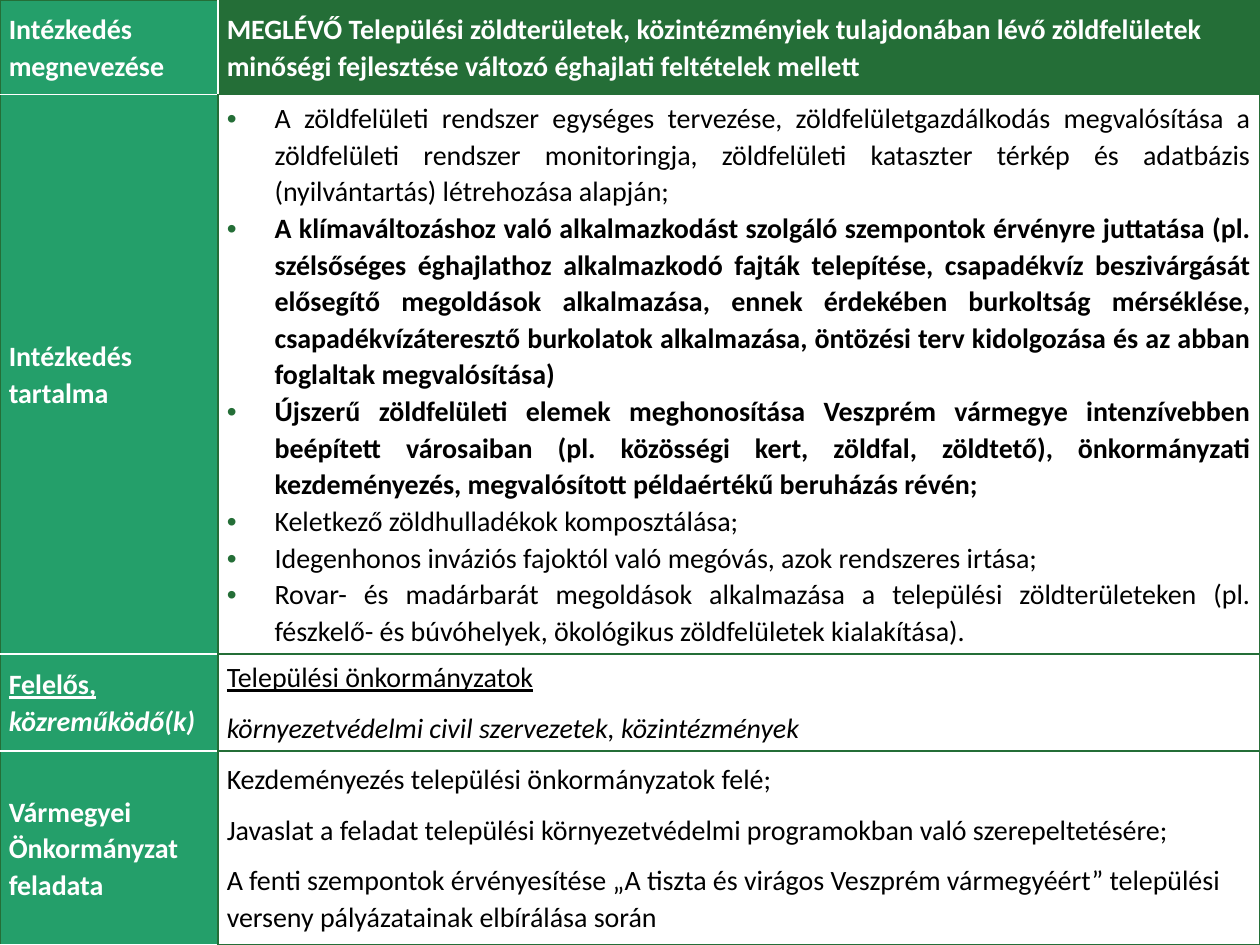
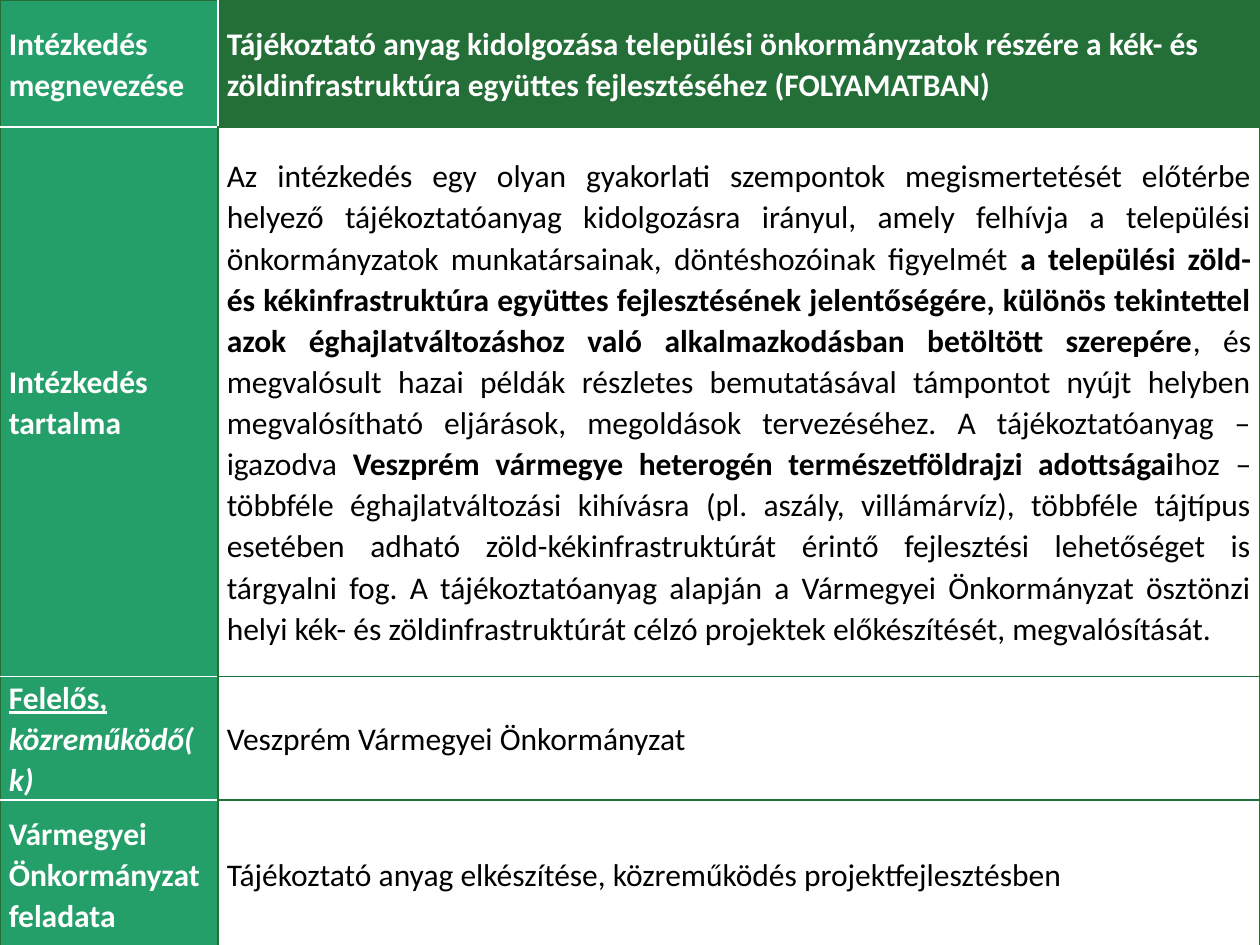
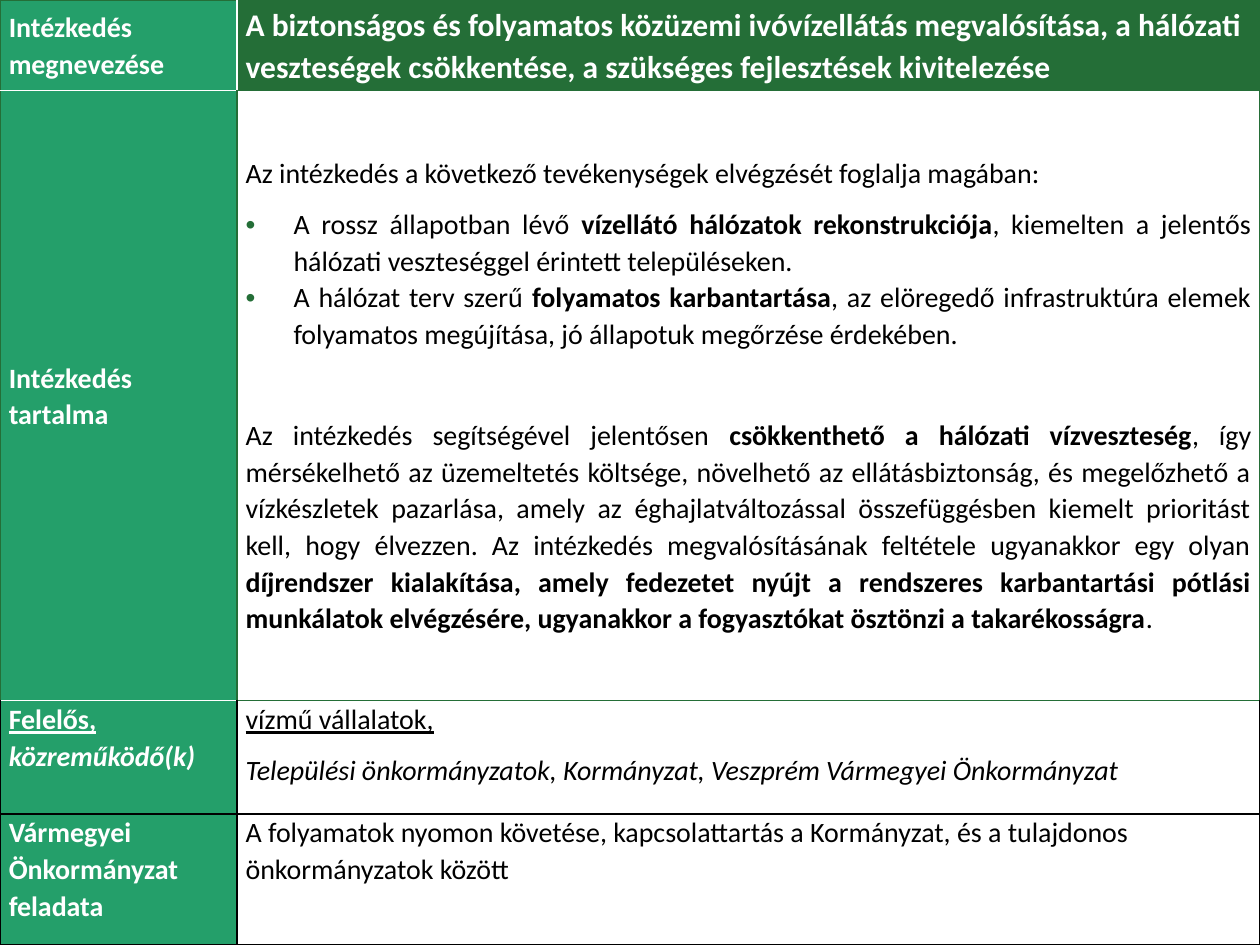
from dataclasses import dataclass
from itertools import zip_longest

from lxml import etree
from pptx import Presentation
from pptx import util as u
from pptx.dml.color import RGBColor
from pptx.enum import text
from pptx.oxml import ns


@dataclass(frozen=True)
class Theme:
    font: str = "Calibri"
    label_fill: str = "249F6A"
    green: str = "246E37"
    white: str = "FFFFFF"
    black: str = "000000"
    small: int = 16
    large: int = 18
    leading: float = 1.07
    after: int = 8
    section_gap: int = 29
    line: float = 1
    indent: float = 0.38
    margin: float = 0.07


T = Theme()
EDGE_COLORS = {"G": T.green, "W": T.white, "K": T.black}

LABELS = [
    [("text", "Intézkedés megnevezése")],
    [("text", "Intézkedés tartalma")],
    [("text", ("Felelős, ", "u"), ("közreműködő(k)", "i"))],
    [("text", "Vármegyei Önkormányzat feladata")],
]

GREEN_EDGES = [("GGWW", "WGGG")] + [("GWGW", "GGGG")] * 3
BLACK_EDGES = GREEN_EDGES[:2] + [("KWKK", "KGKK"), ("KKKK", "KKKK")]

SLIDES = [
    {
        "size": T.small,
        "title_size": T.small,
        "label_width": 1.73,
        "rows": [0.75, 4.44, 0.77, 1.54],
        "edges": GREEN_EDGES,
        "top_rows": (),
        "content": [
            [("text", "MEGLÉVŐ Települési zöldterületek, közintézményiek tulajdonában lévő zöldfelületek minőségi fejlesztése változó éghajlati feltételek mellett")],
            [
                ("bullet", "A zöldfelületi rendszer egységes tervezése, zöldfelületgazdálkodás megvalósítása a zöldfelületi rendszer monitoringja, zöldfelületi kataszter térkép és adatbázis (nyilvántartás) létrehozása alapján;"),
                ("bullet", ("A klímaváltozáshoz való alkalmazkodást szolgáló szempontok érvényre juttatása (pl. szélsőséges éghajlathoz alkalmazkodó fajták telepítése, csapadékvíz beszivárgását elősegítő megoldások alkalmazása, ennek érdekében burkoltság mérséklése, csapadékvízáteresztő burkolatok alkalmazása, öntözési terv kidolgozása és az abban foglaltak megvalósítása)", "b")),
                ("bullet", ("Újszerű zöldfelületi elemek meghonosítása Veszprém vármegye intenzívebben beépített városaiban (pl. közösségi kert, zöldfal, zöldtető), önkormányzati kezdeményezés, megvalósított példaértékű beruházás révén;", "b")),
                ("bullet", "Keletkező zöldhulladékok komposztálása;"),
                ("bullet", "Idegenhonos inváziós fajoktól való megóvás, azok rendszeres irtása;"),
                ("bullet", "Rovar- és madárbarát megoldások alkalmazása a települési zöldterületeken (pl. fészkelő- és búvóhelyek, ökológikus zöldfelületek kialakítása)."),
            ],
            [
                ("text", ("Települési önkormányzatok", "u")),
                ("text", ("környezetvédelmi civil szervezetek, közintézmények", "i")),
            ],
            [
                ("text", "Kezdeményezés települési önkormányzatok felé;"),
                ("text", "Javaslat a feladat települési környezetvédelmi programokban való szerepeltetésére;"),
                ("text", "A fenti szempontok érvényesítése „A tiszta és virágos Veszprém vármegyéért” települési verseny pályázatainak elbírálása során"),
            ],
        ],
    },
    {
        "size": T.large,
        "title_size": T.large,
        "label_width": 1.73,
        "rows": [1.01, 4.36, 0.95, 1.18],
        "edges": GREEN_EDGES,
        "top_rows": (),
        "content": [
            [("text", "Tájékoztató anyag kidolgozása települési önkormányzatok részére a kék- és zöldinfrastruktúra együttes fejlesztéséhez (FOLYAMATBAN)")],
            [
                (
                    "justified",
                    "Az intézkedés egy olyan gyakorlati szempontok megismertetését előtérbe helyező tájékoztatóanyag kidolgozásra irányul, amely felhívja a települési önkormányzatok munkatársainak, döntéshozóinak figyelmét ",
                    ("a települési zöld- és kékinfrastruktúra együttes fejlesztésének jelentőségére, különös tekintettel azok éghajlatváltozáshoz való alkalmazkodásban betöltött szerepére", "b"),
                    ", és megvalósult hazai példák részletes bemutatásával támpontot nyújt helyben megvalósítható eljárások, megoldások tervezéséhez. A tájékoztatóanyag – igazodva ",
                    ("Veszprém vármegye heterogén természetföldrajzi adottságai", "b"),
                    "hoz – többféle éghajlatváltozási kihívásra (pl. aszály, villámárvíz), többféle tájtípus esetében adható zöld-kékinfrastruktúrát érintő fejlesztési lehetőséget is tárgyalni fog. A tájékoztatóanyag alapján a Vármegyei Önkormányzat ösztönzi helyi kék- és zöldinfrastruktúrát célzó projektek előkészítését, megvalósítását.",
                ),
            ],
            [("text", "Veszprém Vármegyei Önkormányzat")],
            [("text", "Tájékoztató anyag elkészítése, közreműködés projektfejlesztésben")],
        ],
    },
    {
        "size": T.small,
        "title_size": T.large,
        "label_width": 1.88,
        "rows": [0.72, 4.84, 0.9, 1.04],
        "edges": BLACK_EDGES,
        "top_rows": (2, 3),
        "content": [
            [("text", "A biztonságos és folyamatos közüzemi ivóvízellátás megvalósítása, a hálózati veszteségek csökkentése, a szükséges fejlesztések kivitelezése")],
            [
                ("justified", "Az intézkedés a következő tevékenységek elvégzését foglalja magában:"),
                (
                    "bullet",
                    "A rossz állapotban lévő ",
                    ("vízellátó hálózatok rekonstrukciója", "b"),
                    ", kiemelten a jelentős hálózati veszteséggel érintett településeken.",
                ),
                (
                    "bullet",
                    "A hálózat terv szerű ",
                    ("folyamatos karbantartása", "b"),
                    ", az elöregedő infrastruktúra elemek folyamatos megújítása, jó állapotuk megőrzése érdekében.",
                ),
                (
                    "section",
                    "Az intézkedés segítségével jelentősen ",
                    ("csökkenthető a hálózati vízveszteség", "b"),
                    ", így mérsékelhető az üzemeltetés költsége, növelhető az ellátásbiztonság, és megelőzhető a vízkészletek pazarlása, amely az éghajlatváltozással összefüggésben kiemelt prioritást kell, hogy élvezzen. Az intézkedés megvalósításának feltétele ugyanakkor egy olyan ",
                    ("díjrendszer kialakítása, amely fedezetet nyújt a rendszeres karbantartási pótlási munkálatok elvégzésére, ugyanakkor a fogyasztókat ösztönzi a takarékosságra", "b"),
                    ".",
                ),
            ],
            [
                ("text", ("vízmű vállalatok,", "u")),
                ("text", ("Települési önkormányzatok, Kormányzat, Veszprém Vármegyei Önkormányzat", "i")),
            ],
            [("text", "A folyamatok nyomon követése, kapcsolattartás a Kormányzat, és a tulajdonos önkormányzatok között")],
        ],
    },
]


def add_text(p, words, size, color, bold=False, italic=False, underline=False):
    r = p.add_run()
    r.text = words
    f = r.font
    f.name, f.size = T.font, u.Pt(size)
    f.bold, f.italic, f.underline = bold, italic, underline
    f.color.rgb = RGBColor.from_string(color)


def add_bullet(p):
    pPr = p._p.get_or_add_pPr()
    pPr.set("marL", str(u.Inches(T.indent)))
    pPr.set("indent", str(-u.Inches(T.indent)))
    color = etree.SubElement(pPr, ns.qn("a:buClr"))
    etree.SubElement(color, ns.qn("a:srgbClr"), val=T.green)
    etree.SubElement(pPr, ns.qn("a:buFont"), typeface="Arial")
    etree.SubElement(pPr, ns.qn("a:buChar"), char="•")


def fill_paragraphs(tf, paragraphs, size, color, bold):
    for i, ((kind, *runs), following) in enumerate(zip_longest(paragraphs, paragraphs[1:])):
        p = tf.add_paragraph() if i else tf.paragraphs[0]
        if kind == "bullet":
            add_bullet(p)
        if kind != "text":
            p.alignment = text.PP_ALIGN.JUSTIFY
        if kind == "section":
            p.space_before = u.Pt(T.section_gap)
        in_list = kind == "bullet" and following and following[0] == "bullet"
        p.space_after = u.Pt(0 if in_list else T.after)
        p.line_spacing = T.leading
        for run in runs:
            words, style = (run, "") if isinstance(run, str) else run
            add_text(p, words, size, color, bold=bold or style == "b",
                     italic=style == "i", underline=style == "u")


def set_borders(cell, edges):
    tcPr = cell._tc.get_or_add_tcPr()
    colors = dict(zip("LTRB", edges))
    for side in "LRTB":
        ln = etree.SubElement(tcPr, ns.qn(f"a:ln{side}"), w=str(u.Pt(T.line)))
        solid = etree.SubElement(ln, ns.qn("a:solidFill"))
        etree.SubElement(solid, ns.qn("a:srgbClr"), val=EDGE_COLORS[colors[side]])


def fill_cell(cell, paragraphs, edges, fill, size, top):
    cell.margin_left = cell.margin_right = u.Inches(T.margin)
    cell.margin_top = cell.margin_bottom = 0
    cell.vertical_anchor = text.MSO_ANCHOR.TOP if top else text.MSO_ANCHOR.MIDDLE
    set_borders(cell, edges)
    if fill:
        cell.fill.solid()
        cell.fill.fore_color.rgb = RGBColor.from_string(fill)
    else:
        cell.fill.background()
    fill_paragraphs(cell.text_frame, paragraphs, size,
                    T.white if fill else T.black, bool(fill))


def add_measure(prs, measure):
    s = prs.slides.add_slide(prs.slide_layouts[6])
    rows = measure["rows"]
    table = s.shapes.add_table(len(rows), 2, 0, 0, prs.slide_width, prs.slide_height).table
    table.first_row = table.horz_banding = False
    table.columns[0].width = u.Inches(measure["label_width"])
    table.columns[1].width = prs.slide_width - table.columns[0].width
    for i, height in enumerate(rows):
        table.rows[i].height = u.Inches(height)
        label_edges, content_edges = measure["edges"][i]
        top = i in measure["top_rows"]
        fill_cell(table.cell(i, 0), LABELS[i], label_edges, T.label_fill,
                  measure["size"], top)
        fill_cell(table.cell(i, 1), measure["content"][i], content_edges,
                  None if i else T.green,
                  measure["size" if i else "title_size"], top)


def main():
    prs = Presentation()
    prs.slide_width, prs.slide_height = u.Inches(10), u.Inches(7.5)
    for measure in SLIDES:
        add_measure(prs, measure)
    prs.save("out.pptx")


if __name__ == "__main__":
    main()
